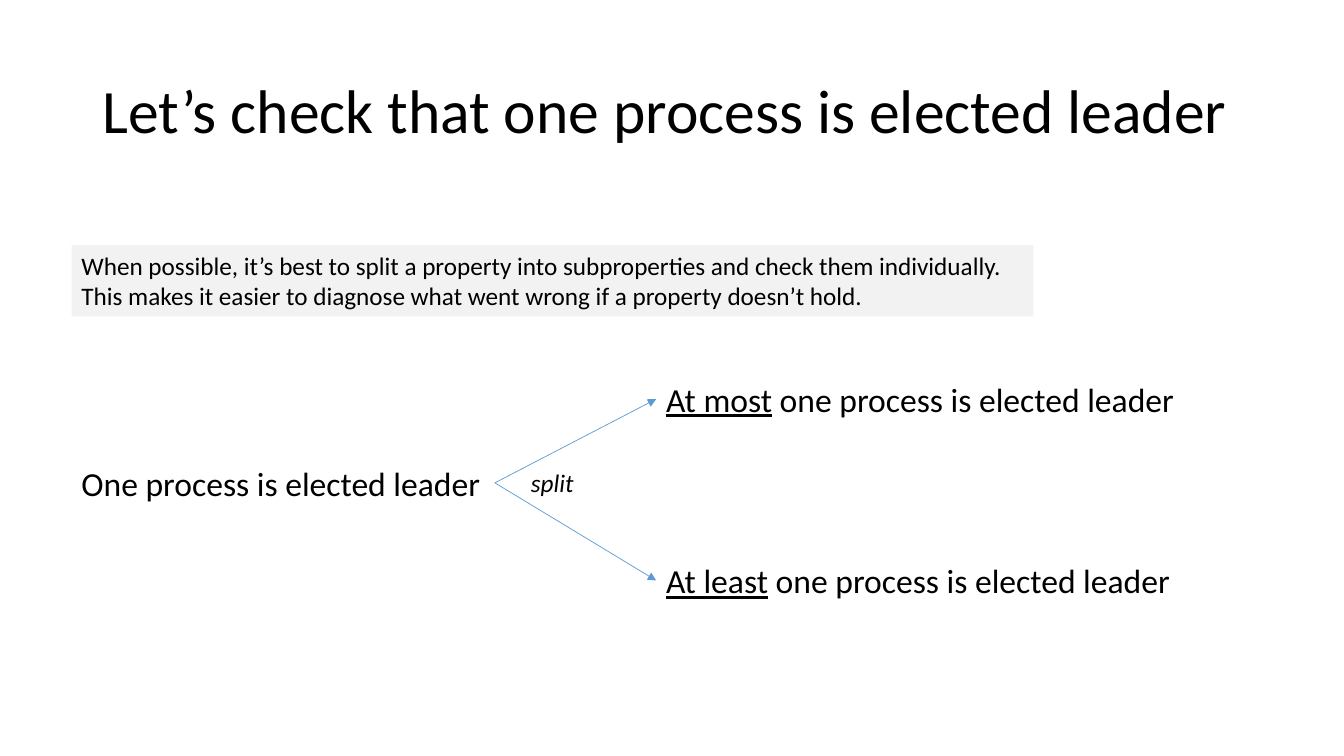
from dataclasses import dataclass

import pptx
import pptx.dml.color
import pptx.enum.dml
import pptx.enum.shapes
import pptx.enum.text
import pptx.oxml
import pptx.oxml.ns
import pptx.util
from pptx.shapes.autoshape import Shape
from pptx.slide import Slide

Pt = pptx.util.Pt
RGBColor = pptx.dml.color.RGBColor
MSO_ANCHOR = pptx.enum.text.MSO_ANCHOR
MSO_AUTO_SIZE = pptx.enum.text.MSO_AUTO_SIZE
PP_ALIGN = pptx.enum.text.PP_ALIGN

BLACK = RGBColor(0x00, 0x00, 0x00)
GRAY = RGBColor(0xF2, 0xF2, 0xF2)
BLUE = RGBColor(0x5B, 0x9B, 0xD5)

TOP, LEFT, BOTTOM, RIGHT = range(4)  # connection sites


@dataclass
class TextItem:
    box: tuple[float, float, float, float]  # left, top, width, height
    runs: list[tuple[str, dict]]  # text and extra font format
    size: float
    wrap: bool = False
    grow: bool = True
    anchor: MSO_ANCHOR = MSO_ANCHOR.TOP
    spacing: float = 1.0
    fill: RGBColor | None = None


def add_text(s: Slide, item: TextItem) -> Shape:
    box = [Pt(v) for v in item.box]
    if item.fill is None:
        sp = s.shapes.add_textbox(*box)
    else:
        sp = s.shapes.add_shape(pptx.enum.shapes.MSO_SHAPE.RECTANGLE, *box)
        sp.shadow.inherit = False
        sp.fill.solid()
        sp.fill.fore_color.rgb = item.fill
        sp.line.fill.background()
    tf = sp.text_frame
    tf.word_wrap = item.wrap
    tf.auto_size = MSO_AUTO_SIZE.SHAPE_TO_FIT_TEXT if item.grow else MSO_AUTO_SIZE.NONE
    tf.vertical_anchor = item.anchor
    p = tf.paragraphs[0]
    p.alignment = PP_ALIGN.LEFT
    p.line_spacing = item.spacing
    for text, extra in item.runs:
        r = p.add_run()
        r.text = text
        for name, value in ({"name": "Calibri", "size": Pt(item.size)} | extra).items():
            setattr(r.font, name, value)
        r.font.color.rgb = BLACK
    return sp


def add_arrow(s: Slide, start: Shape, end: Shape) -> None:
    """Draw an arrow from the right side of start to the left side of end."""
    cxn = s.shapes.add_connector(pptx.enum.shapes.MSO_CONNECTOR.STRAIGHT, 0, 0, 0, 0)
    cxn.begin_connect(start, RIGHT)
    cxn.end_connect(end, LEFT)
    cxn.line.color.rgb = BLUE
    cxn.line.width = Pt(0.5)
    ln = cxn.line._get_or_add_ln()
    ln.append(pptx.oxml.parse_xml(
        f'<a:tailEnd {pptx.oxml.ns.nsdecls("a")} type="triangle"/>'))
    ln.getparent().append(pptx.oxml.parse_xml(
        f'<a:effectLst {pptx.oxml.ns.nsdecls("a")}/>'))


TITLE = TextItem((66, 28.8, 828, 104.4),
                 [("Let’s check that one process is elected leader", {})],
                 44, wrap=True, grow=False, anchor=MSO_ANCHOR.MIDDLE, spacing=0.9)
ADVICE = TextItem((51.1, 175, 687, 51),
                  [("When possible, it’s best to split a property into subproperties "
                    "and check them individually. This makes it easier to diagnose "
                    "what went wrong if a property doesn’t hold.", {})],
                  18, wrap=True, fill=GRAY)
PROPERTY = TextItem((51.1, 326.9, 302.4, 36), [("One process is elected leader", {})], 24)
SPLIT = TextItem((372.2, 330.5, 45.4, 29), [("split", {"italic": True})], 18)
SUBPROPERTIES = [
    TextItem((468.7, top, width, 36),
             [(bound, {"underline": True}), (" one process is elected leader", {})], 24)
    for bound, top, width in (("At most", 267.1, 381), ("At least", 396.6, 378))
]


def main() -> None:
    prs = pptx.Presentation()
    prs.slide_width, prs.slide_height = Pt(960), Pt(540)
    s = prs.slides.add_slide(prs.slide_layouts[6])

    # Title and advice
    add_text(s, TITLE)
    add_text(s, ADVICE)

    # Property split into its two subproperties
    whole = add_text(s, PROPERTY)
    for item in SUBPROPERTIES:
        add_arrow(s, whole, add_text(s, item))
    add_text(s, SPLIT)

    prs.save("out.pptx")


if __name__ == "__main__":
    main()
